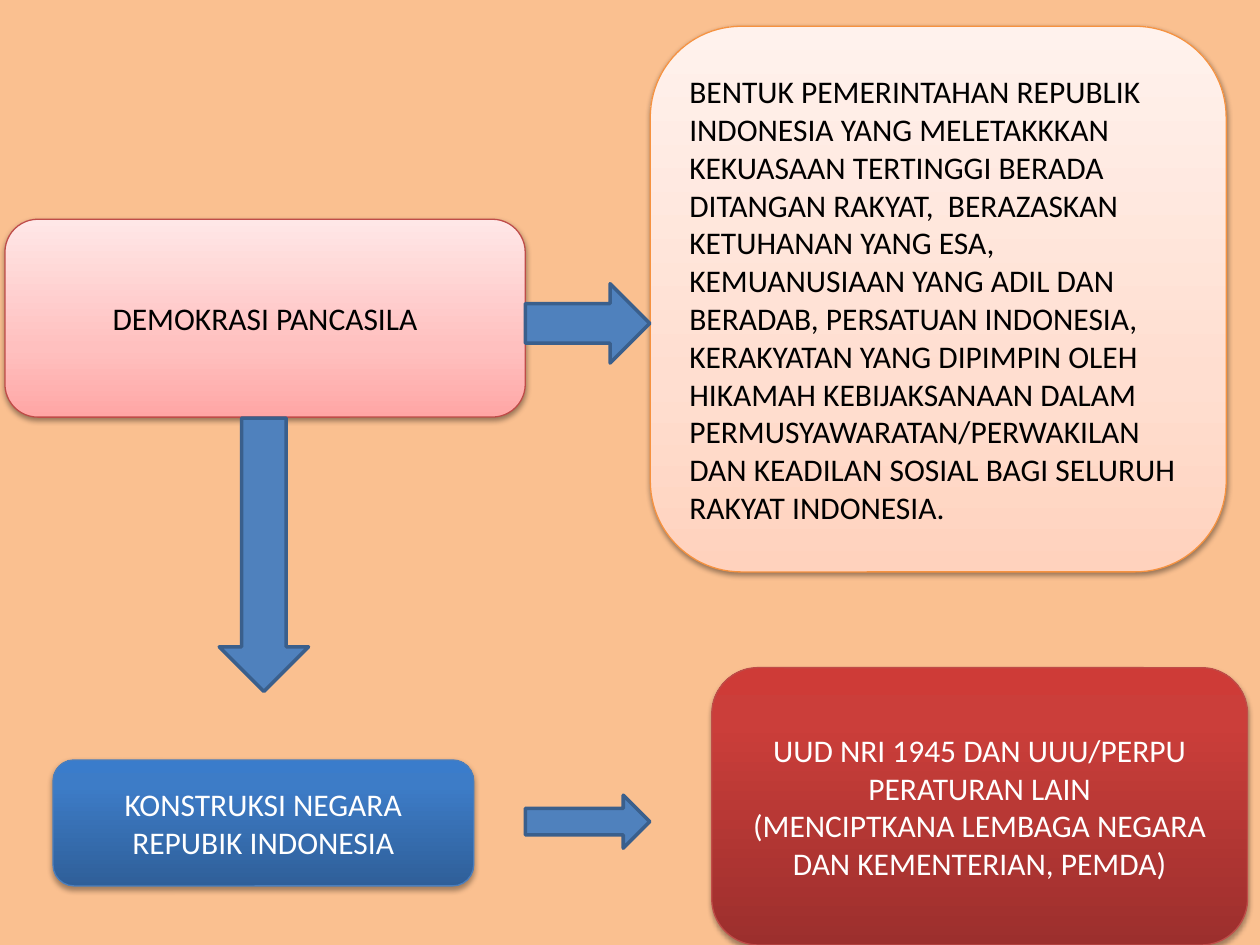
from dataclasses import dataclass

from lxml.etree import SubElement as Sub
from pptx import Presentation
from pptx.dml.color import RGBColor as Rgb
from pptx.enum.shapes import MSO_SHAPE as Kind
from pptx.enum.text import MSO_ANCHOR as Anchor, PP_ALIGN as Align
from pptx.oxml import parse_xml
from pptx.oxml.ns import nsdecls, qn
from pptx.util import Cm, Pt


@dataclass(frozen=True)
class Tone:
    stops: tuple
    line: str
    text: str
    shade: int
    drop: float


@dataclass(frozen=True)
class Theme:
    font: str = "Calibri"
    size: int = 18
    back: str = "FAC090"
    arrow: str = "4F81BD"
    edge: str = "3A5F8C"
    pink: Tone = Tone(((0, "FFA6A5"), (35, "FFC0BF"), (100, "FFE7E7")),
                      "BF4C48", "000000", 38, 1.6)
    peach: Tone = Tone(((0, "FFD2BD"), (35, "FFDED0"), (100, "FFF2ED")),
                       "F69240", "000000", 38, 1.6)
    red: Tone = Tone(((0, "9C2F2D"), (80, "CB3E3A"), (100, "CE3B37")),
                     "BF4C48", "FFFFFF", 35, 1.8)
    blue: Tone = Tone(((0, "2F5F99"), (80, "3D7CC7"), (100, "3A7CCB")),
                      "4B7EBC", "FFFFFF", 35, 1.8)


def add_form(kind, area, line, width):
    form = slide.shapes.add_shape(kind, *map(Cm, area))
    form.shadow.inherit = False
    form.line.color.rgb = Rgb.from_string(line)
    form.line.width = Pt(width)
    return form


def add_depth(form, tone):
    props = form._element.spPr
    stops = "".join(
        f'<a:gs pos="{pos * 1000}"><a:srgbClr val="{color}"/></a:gs>'
        for pos, color in tone.stops)
    grad = parse_xml(
        f'<a:gradFill {nsdecls("a")} rotWithShape="1"><a:gsLst>{stops}</a:gsLst>'
        '<a:lin ang="16200000" scaled="0"/></a:gradFill>')
    props.find(qn("a:prstGeom")).addnext(grad)
    cast = Sub(props.find(qn("a:effectLst")), qn("a:outerShdw"),
               blurRad=str(Pt(3.1)), dist=str(Pt(tone.drop)),
               dir="5400000", rotWithShape="0")
    color = Sub(cast, qn("a:srgbClr"), val="000000")
    Sub(color, qn("a:alpha"), val=str(tone.shade * 1000))


theme = Theme()
deck = Presentation()
deck.slide_width, deck.slide_height = Cm(25.4), Cm(19.05)
slide = deck.slides.add_slide(deck.slide_layouts[6])
back = slide.background.fill
back.solid()
back.fore_color.rgb = Rgb.from_string(theme.back)

boxes = [
    ((0.1, 4.42, 10.49, 3.99), theme.pink, Align.CENTER, "DEMOKRASI PANCASILA"),
    ((13.11, 0.53, 11.61, 11), theme.peach, Align.LEFT,
     "BENTUK PEMERINTAHAN REPUBLIK INDONESIA YANG MELETAKKKAN KEKUASAAN "
     "TERTINGGI BERADA DITANGAN RAKYAT,  BERAZASKAN KETUHANAN YANG ESA, "
     "KEMUANUSIAAN YANG ADIL DAN BERADAB, PERSATUAN INDONESIA, KERAKYATAN "
     "YANG DIPIMPIN OLEH HIKAMAH KEBIJAKSANAAN DALAM "
     "PERMUSYAWARATAN/PERWAKILAN DAN KEADILAN SOSIAL BAGI SELURUH RAKYAT "
     "INDONESIA."),
    ((14.35, 13.46, 10.8, 5.59), theme.red, Align.CENTER,
     "UUD NRI 1945 DAN UUU/PERPU PERATURAN LAIN\n"
     "(MENCIPTKANA LEMBAGA NEGARA DAN KEMENTERIAN, PEMDA)"),
    ((1.07, 15.32, 8.48, 2.54), theme.blue, Align.CENTER,
     "KONSTRUKSI NEGARA REPUBIK INDONESIA"),
]
for area, tone, align, text in boxes:
    box = add_form(Kind.ROUNDED_RECTANGLE, area, tone.line, 0.75)
    add_depth(box, tone)
    frame = box.text_frame
    frame.word_wrap = True
    frame.vertical_anchor = Anchor.MIDDLE
    frame.text = text
    for para in frame.paragraphs:
        para.alignment = align
        for run in para.runs:
            run.font.name = theme.font
            run.font.size = Pt(theme.size)
            run.font.color.rgb = Rgb.from_string(tone.text)

arrows = [
    (Kind.RIGHT_ARROW, (10.59, 5.72, 2.51, 1.6)),
    (Kind.DOWN_ARROW, (4.42, 8.43, 1.8, 5.51)),
    (Kind.RIGHT_ARROW, (10.59, 16.03, 2.51, 1.07)),
]
for kind, area in arrows:
    arrow = add_form(kind, area, theme.edge, 2)
    arrow.fill.solid()
    arrow.fill.fore_color.rgb = Rgb.from_string(theme.arrow)

deck.save("out.pptx")
